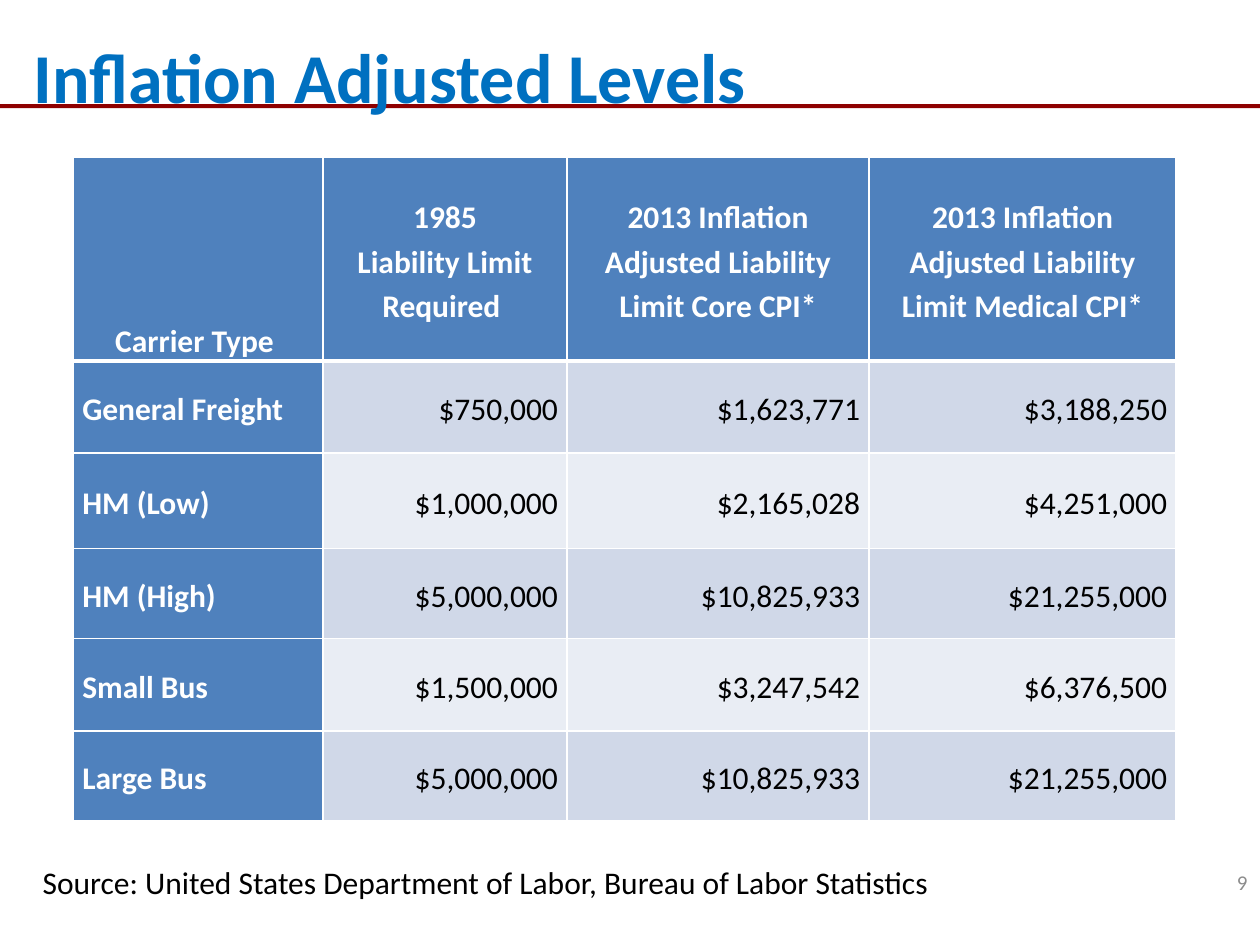
from lxml.etree import SubElement
from pptx import Presentation
from pptx.dml.color import RGBColor
from pptx.enum.shapes import MSO_SHAPE
from pptx.enum.text import MSO_ANCHOR as ANCHOR, MSO_AUTO_SIZE as AUTO, PP_ALIGN as ALIGN
from pptx.oxml.ns import qn
from pptx.util import Cm, Pt

WHITE = RGBColor(0xFF, 0xFF, 0xFF)
BLACK = RGBColor(0x00, 0x00, 0x00)
RED = RGBColor(0x8E, 0x00, 0x00)
TITLE_BLUE = RGBColor(0x00, 0x70, 0xC0)
HEAD_BLUE = RGBColor(0x4F, 0x81, 0xBD)
BANDS = (RGBColor(0xD0, 0xD8, 0xE8), RGBColor(0xE9, 0xED, 0xF4))
GREY = RGBColor(0x8C, 0x8C, 0x8C)
FONT = "Calibri"

COL_WIDTHS = (5.03, 4.92, 6.09, 6.19)
ROW_HEIGHTS = (4.1, 1.85, 1.93, 1.81, 1.87, 1.81)
ROWS = (
    ("Carrier Type ", "1985\nLiability Limit\nRequired ",
     "2013 Inflation Adjusted Liability Limit Core CPI*",
     "2013 Inflation Adjusted Liability Limit Medical CPI*"),
    ("General Freight", "$750,000", "$1,623,771", "$3,188,250"),
    ("HM (Low)", "$1,000,000", "$2,165,028", "$4,251,000"),
    ("HM (High)", "$5,000,000", "$10,825,933", "$21,255,000"),
    ("Small Bus", "$1,500,000", "$3,247,542", "$6,376,500"),
    ("Large Bus", "$5,000,000", "$10,825,933", "$21,255,000"),
)


def set_attrs(obj, **values):
    for name, value in values.items():
        setattr(obj, name, value)


def write(tf, text, size, color, bold=False, **paragraph_format):
    p = tf.paragraphs[0]
    p.text = text
    set_attrs(p, **paragraph_format)
    for r in p.runs:
        set_attrs(r.font, name=FONT, size=Pt(size), bold=bold)
        r.font.color.rgb = color


def place(sp, left, top, width, height):
    set_attrs(sp, left=Cm(left), top=Cm(top), width=Cm(width), height=Cm(height))


def add_rule(s):
    """Draw the red rule behind the title."""
    sp = s.shapes.add_shape(MSO_SHAPE.RECTANGLE, Cm(0), Cm(2.1), Cm(25.4), Cm(0.08))
    sp.shadow.inherit = False
    sp.fill.solid()
    sp.fill.fore_color.rgb = RED
    sp.line.fill.background()
    s.shapes._spTree.insert(2, sp._element)


def add_title(s, text):
    sp = s.shapes.title
    place(sp, 0.43, 0.43, 24.97, 2.2)
    set_attrs(sp.text_frame, auto_size=AUTO.NONE, vertical_anchor=ANCHOR.MIDDLE)
    write(sp.text_frame, text, 40, TITLE_BLUE, True, alignment=ALIGN.LEFT)


def add_label(s, box, text, size, color, align, anchor):
    tf = s.shapes.add_textbox(*map(Cm, box)).text_frame
    set_attrs(tf, word_wrap=True, vertical_anchor=anchor)
    write(tf, text, size, color, alignment=align)


def set_borders(cell, **widths):
    """Give the cell white borders; widths are points by side, L, R, T and B."""
    tc_pr = cell._tc.get_or_add_tcPr()
    for side, width in widths.items():
        ln = SubElement(tc_pr, qn(f"a:ln{side}"), w=str(Pt(width)))
        fill = SubElement(ln, qn("a:solidFill"))
        SubElement(fill, qn("a:srgbClr"), val=str(WHITE))


def fill_cell(cell, text, row, col):
    head, label = row == 0, col == 0
    set_borders(cell, L=1, R=1, T=3 if row == 1 else 1, B=3 if head else 1)
    cell.fill.solid()
    cell.fill.fore_color.rgb = HEAD_BLUE if head or label else BANDS[(row - 1) % 2]
    set_attrs(cell, margin_left=Cm(0.18), margin_right=Cm(0.18), margin_top=0,
              margin_bottom=0,
              vertical_anchor=ANCHOR.BOTTOM if head and label else ANCHOR.MIDDLE)
    align = ALIGN.CENTER if head else ALIGN.LEFT if label else ALIGN.RIGHT
    write(cell.text_frame, text, 18, WHITE if head or label else BLACK, head or label,
          alignment=align, line_spacing=1.15, space_before=Pt(0),
          space_after=Pt(3 if head else 1))


def add_limits_table(s):
    frame = s.shapes.add_table(len(ROWS), len(COL_WIDTHS), Cm(1.48), Cm(3.18),
                               Cm(sum(COL_WIDTHS)), Cm(sum(ROW_HEIGHTS)))
    table = frame.table
    for column, width in zip(table.columns, COL_WIDTHS):
        column.width = Cm(width)
    for row, height in zip(table.rows, ROW_HEIGHTS):
        row.height = Cm(height)
    for i, texts in enumerate(ROWS):
        for j, text in enumerate(texts):
            fill_cell(table.cell(i, j), text, i, j)


def main():
    prs = Presentation()
    set_attrs(prs, slide_width=Cm(25.4), slide_height=Cm(19.05))
    s = prs.slides.add_slide(prs.slide_layouts[5])
    add_rule(s)
    add_title(s, "Inflation Adjusted Levels")
    add_label(s, (19.48, 17.27, 5.92, 1.02), "9", 12, GREY, ALIGN.RIGHT, ANCHOR.MIDDLE)
    add_label(s, (0.61, 17.27, 23.09, 1.02),
              "Source: United States Department of Labor, Bureau of Labor Statistics",
              18, BLACK, ALIGN.LEFT, ANCHOR.TOP)
    add_limits_table(s)
    prs.save("out.pptx")


if __name__ == "__main__":
    main()
